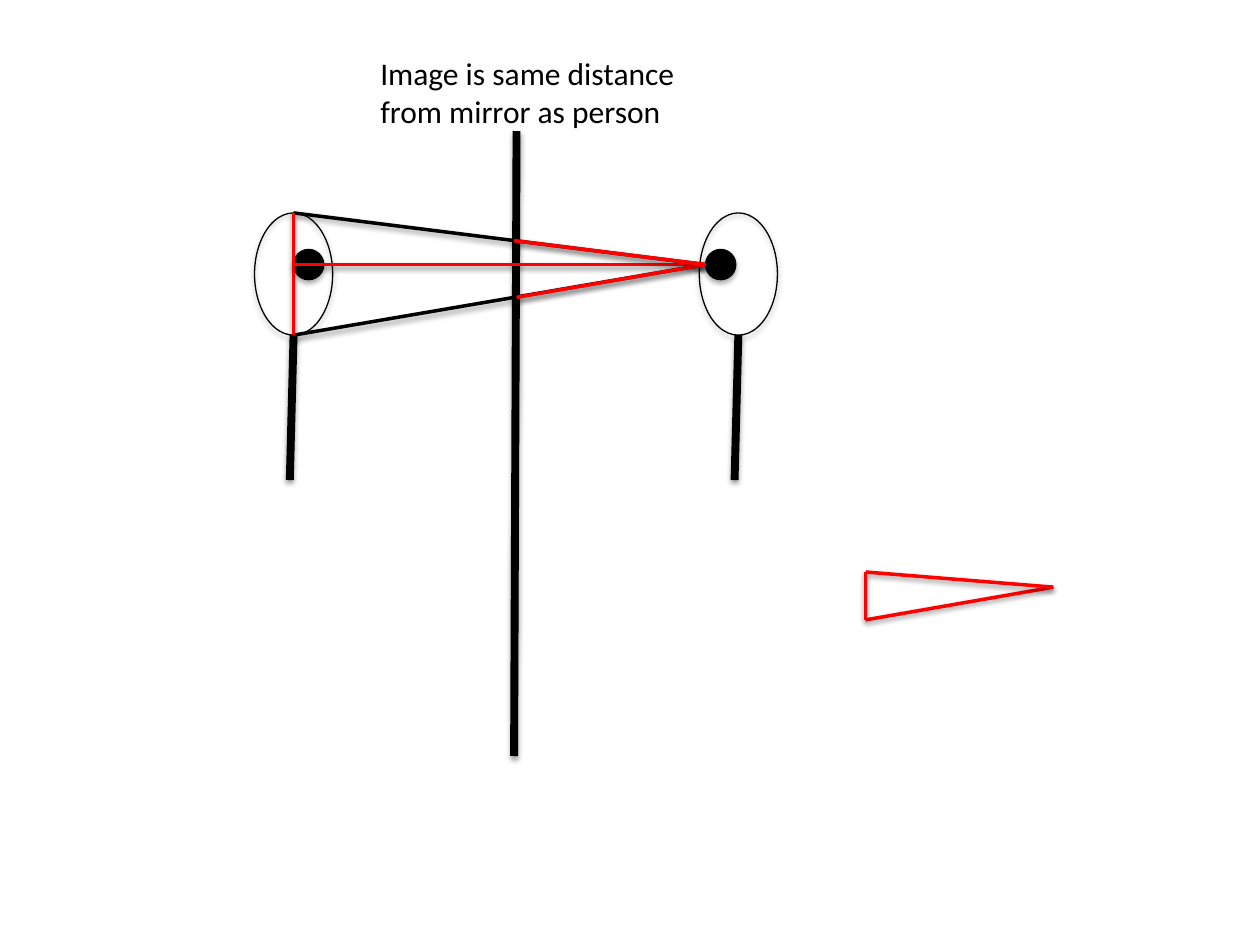
from lxml.etree import SubElement
from pptx import Presentation
from pptx.dml.color import RGBColor
from pptx.enum.shapes import MSO_CONNECTOR, MSO_SHAPE
from pptx.oxml.ns import qn
from pptx.util import Inches, Pt

THEME = {
    "font": "Calibri", "text_size": 18,
    "black": RGBColor(0, 0, 0), "red": RGBColor(255, 0, 0),
    "outline": 0.75, "ray": 2, "thick": 4.5,
    "line_shadow": (1.6, 38), "shape_shadow": (1.8, 35), "blur": 3.1,
}

CAPTION = "Image is same distance from mirror as person"
CAPTION_BOX = (2.92, 0.38, 2.86, 0.71)
MIRROR = ((4.1, 1.04), (4.08, 6))

HEAD_TOP, HEAD_WIDTH, HEAD_HEIGHT = 1.69, 0.62, 0.97
PERSON_LEFT, IMAGE_LEFT = 2.02, 5.55
BODY_LEAN, BODY_END = 0.03, 3.81
EYE_TOP, EYE_SIZE = 1.98, 0.24
PERSON_EYE_LEFT, IMAGE_EYE_LEFT = 2.33, 5.6

FACE_X = PERSON_LEFT + HEAD_WIDTH / 2
FACE_TOP = (FACE_X, HEAD_TOP)
FACE_BOTTOM = (FACE_X, HEAD_TOP + HEAD_HEIGHT)
FACE_MIDDLE = (FACE_X, EYE_TOP + EYE_SIZE / 2)
VIEWPOINT = (IMAGE_EYE_LEFT, EYE_TOP + EYE_SIZE / 2)

RAYS = [
    (FACE_TOP, VIEWPOINT, "black"),
    (FACE_BOTTOM, VIEWPOINT, "black"),
    (FACE_TOP, FACE_BOTTOM, "red"),
    (FACE_MIDDLE, VIEWPOINT, "red"),
    ((4.1, 2.36), VIEWPOINT, "red"),
    ((4.08, 1.91), VIEWPOINT, "red"),
]
TRIANGLE_TOP, TRIANGLE_BOTTOM, TRIANGLE_TIP = (6.87, 4.54), (6.87, 4.92), (8.36, 4.66)
TRIANGLE = [
    (TRIANGLE_BOTTOM, TRIANGLE_TIP),
    (TRIANGLE_TOP, TRIANGLE_TIP),
    (TRIANGLE_TOP, TRIANGLE_BOTTOM),
]


def add_shadow(properties, distance, opacity):
    effects = SubElement(properties, qn("a:effectLst"))
    shadow = SubElement(
        effects, qn("a:outerShdw"), blurRad=str(Pt(THEME["blur"])),
        dist=str(Pt(distance)), dir=str(90 * 60000), rotWithShape="0")
    color = SubElement(shadow, qn("a:srgbClr"), val=str(THEME["black"]))
    SubElement(color, qn("a:alpha"), val=str(opacity * 1000))


def add_line(shapes, start, end, color="black", weight="ray"):
    line = shapes.add_connector(
        MSO_CONNECTOR.STRAIGHT, *(Inches(value) for value in (*start, *end)))
    line.line.color.rgb = THEME[color]
    line.line.width = Pt(THEME[weight])
    add_shadow(line.element.spPr, *THEME["line_shadow"])


def add_oval(shapes, left, top, width, height, filled=False):
    oval = shapes.add_shape(
        MSO_SHAPE.OVAL, *(Inches(value) for value in (left, top, width, height)))
    if filled:
        oval.fill.solid()
        oval.fill.fore_color.rgb = THEME["black"]
    else:
        oval.fill.background()
    oval.line.color.rgb = THEME["black"]
    oval.line.width = Pt(THEME["outline"])
    add_shadow(oval.element.spPr, *THEME["shape_shadow"])


def add_figure(shapes, left):
    """Draw a head and the body hanging below it."""
    add_oval(shapes, left, HEAD_TOP, HEAD_WIDTH, HEAD_HEIGHT)
    neck_x = left + HEAD_WIDTH / 2
    add_line(shapes, (neck_x, HEAD_TOP + HEAD_HEIGHT),
             (neck_x - BODY_LEAN, BODY_END), weight="thick")


def add_eye(shapes, left):
    add_oval(shapes, left, EYE_TOP, EYE_SIZE, EYE_SIZE, filled=True)


def add_caption(shapes):
    box = shapes.add_textbox(*(Inches(value) for value in CAPTION_BOX))
    box.text_frame.word_wrap = True
    span = box.text_frame.paragraphs[0].add_run()
    span.text = CAPTION
    span.font.name = THEME["font"]
    span.font.size = Pt(THEME["text_size"])
    span.font.color.rgb = THEME["black"]


def main():
    deck = Presentation()
    deck.slide_width, deck.slide_height = Inches(10), Inches(7.5)
    shapes = deck.slides.add_slide(deck.slide_layouts[6]).shapes

    add_line(shapes, *MIRROR, weight="thick")
    add_figure(shapes, PERSON_LEFT)
    image = shapes.add_group_shape().shapes
    add_figure(image, IMAGE_LEFT)
    add_eye(image, IMAGE_EYE_LEFT)
    add_eye(shapes, PERSON_EYE_LEFT)
    for start, end, color in RAYS:
        add_line(shapes, start, end, color)
    triangle = shapes.add_group_shape().shapes
    for start, end in TRIANGLE:
        add_line(triangle, start, end, "red")
    add_caption(shapes)
    deck.save("out.pptx")


if __name__ == "__main__":
    main()
